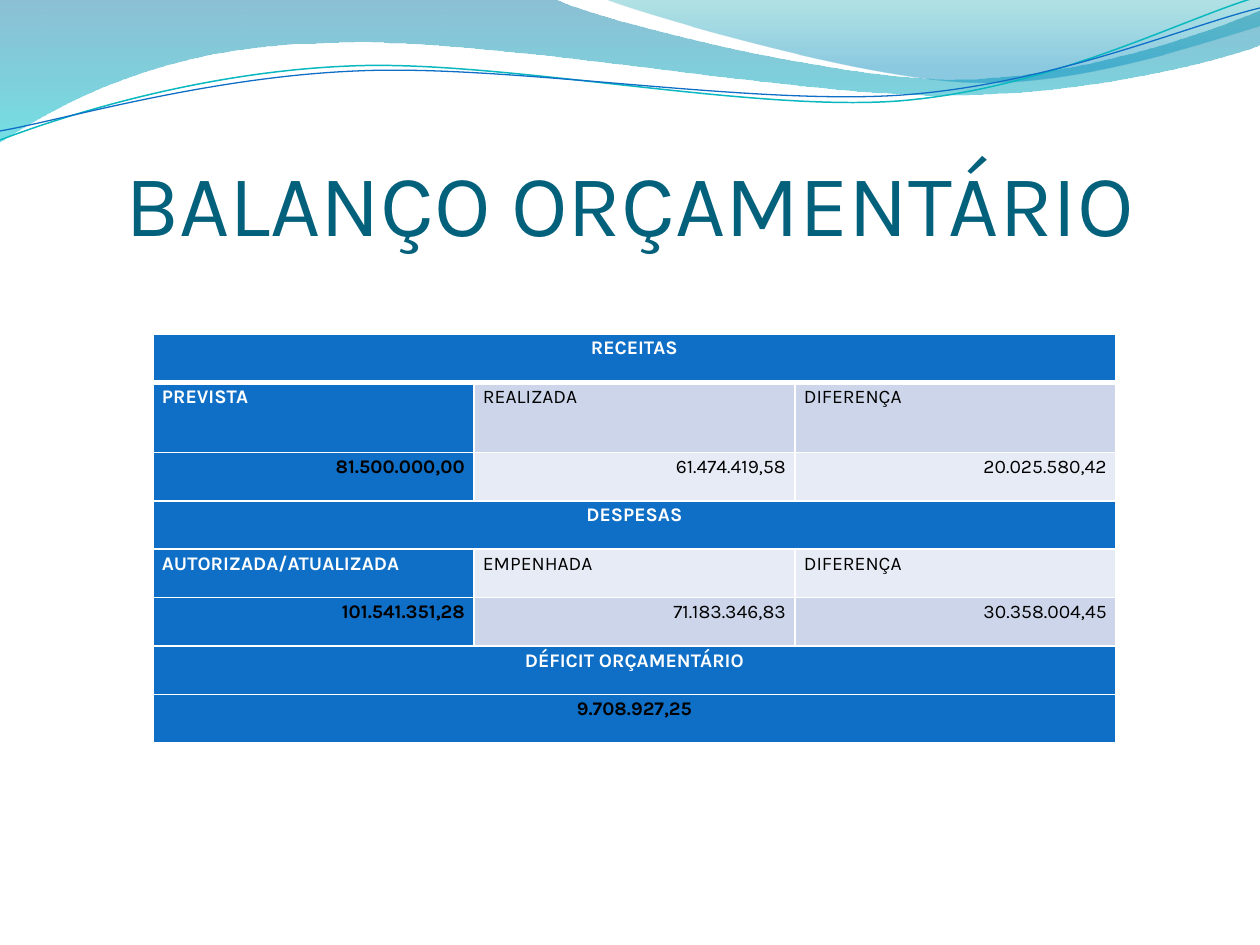
from lxml.etree import SubElement
from pptx import Presentation
from pptx.dml.color import RGBColor
from pptx.enum.text import MSO_ANCHOR, MSO_AUTO_SIZE, PP_ALIGN
from pptx.oxml.ns import qn
from pptx.util import Emu, Pt

FONT = "Karla"
WHITE = RGBColor(0xFF, 0xFF, 0xFF)
BLACK = RGBColor(0, 0, 0)
BLUE = RGBColor(0x0F, 0x6F, 0xC6)
TEAL = RGBColor(0x0A, 0xB8, 0xBF)
NAVY = RGBColor(0x04, 0x61, 0x7B)
DEEP = RGBColor(0x00, 0x74, 0xA1)
CYAN = RGBColor(0x00, 0xC6, 0xCF)
GREEN = RGBColor(0x00, 0xA1, 0xA9)
SKY = RGBColor(0x00, 0x8B, 0xBF)
BAND = RGBColor(0xCC, 0xD5, 0xEA)
PALE = RGBColor(0xE7, 0xEB, 0xF5)

LEFT, MID, RIGHT = PP_ALIGN.LEFT, PP_ALIGN.CENTER, PP_ALIGN.RIGHT

# Each part is a line end (x, y) or a cubic curve (x1, y1, x2, y2, x, y).
WAVE = [(554, -1), (600, 21, 837, 79, 955, 79), (1075, 79, 1207, 33, 1260, 11),
        (1261, 45), (1237, 55, 1096, 96, 940, 95), (784, 95, 481, 35, 324, 43),
        (163, 45, 58, 105, -1, 142)]
CREST = [(641, 14, 859, 78, 969, 82), (1079, 87, 1211, 40, 1260, 26), (1260, 0)]
UPPER = [(60, 117, 199, 72, 349, 66), (498, 59, 747, 112, 898, 101),
         (1050, 89, 1182, 19, 1257, -3)]
LOWER = [(59, 121, 207, 77, 357, 71), (508, 64, 752, 106, 903, 95),
         (1053, 84, 1186, 26, 1260, 8)]

# Alignment, fill of the plain cells, texts; a single text spans the row.
ROWS = [
    (MID, None, ["RECEITAS"]),
    (LEFT, BAND, ["PREVISTA", "REALIZADA", "DIFERENÇA"]),
    (RIGHT, PALE, ["81.500.000,00", "61.474.419,58", "20.025.580,42"]),
    (MID, None, ["DESPESAS"]),
    (LEFT, PALE, ["AUTORIZADA/ATUALIZADA", "EMPENHADA", "DIFERENÇA"]),
    (RIGHT, BAND, ["101.541.351,28", "71.183.346,83", "30.358.004,45"]),
    (MID, None, ["DÉFICIT ORÇAMENTÁRIO"]),
    (MID, None, ["9.708.927,25"]),
]
TALL, HIGH = 70, 409


def px(n):
    return Emu(round(n * 914400 / 126))


def add_path(slide, start, parts, close):
    """Outline the parts' end points, then bend the curved parts."""
    pen = slide.shapes.build_freeform(px(start[0]), px(start[1]))
    pen.add_line_segments([(px(p[-2]), px(p[-1])) for p in parts], close=close)
    shape = pen.convert_to_shape()
    shape.shadow.inherit = False
    lines = list(shape._element.iter(qn("a:lnTo")))
    for line, part in zip(lines, parts):
        if len(part) == 2:
            continue
        home = line.getparent()
        bend = SubElement(home, qn("a:cubicBezTo"))
        for x, y in zip(part[::2], part[1::2]):
            SubElement(bend, qn("a:pt"), x=str(px(x) - shape.left),
                       y=str(px(y) - shape.top))
        home.replace(line, bend)
    return shape


def add_wave(slide, start, parts, stops):
    """Add a filled wave; each stop is a position, a colour and an opacity."""
    shape = add_path(slide, start, parts, True)
    shape.line.fill.background()
    shape.fill.gradient()
    shape.fill.gradient_angle = 270
    for stop, (place, color, alpha) in zip(shape.fill.gradient_stops, stops):
        stop.position = place
        stop.color.rgb = color
        rgb = next(stop._gs.iter(qn("a:srgbClr")))
        SubElement(rgb, qn("a:alpha"), val=str(alpha * 1000))


def add_curve(slide, start, parts, color, width):
    shape = add_path(slide, start, parts, False)
    shape.fill.background()
    shape.line.color.rgb = color
    shape.line.width = Pt(width)


def add_run(para, text, size, color, bold=False):
    run = para.add_run()
    run.text = text
    font = run.font
    font.name, font.size, font.bold = FONT, Pt(size), bold
    font.color.rgb = color


def set_title(slide, text):
    title = slide.shapes.title
    slide.shapes._spTree.append(title._element)
    title.left, title.top = px(63), px(97)
    title.width, title.height = px(1134), px(157)
    frame = title.text_frame
    frame.word_wrap = True
    frame.auto_size = MSO_AUTO_SIZE.NONE
    frame.vertical_anchor = MSO_ANCHOR.BOTTOM
    frame.margin_left = frame.margin_right = frame.margin_bottom = 0
    frame.margin_top = px(6)
    para = frame.paragraphs[0]
    para.alignment = MID
    add_run(para, text, 50, NAVY)


def set_edges(cell, base):
    """Give the cell white borders, with the bottom one `base` points wide."""
    props = cell._tc.get_or_add_tcPr()
    for side, width in (("L", 1), ("R", 1), ("T", 1), ("B", base)):
        edge = SubElement(props, qn("a:ln" + side), w=str(Pt(width)))
        fill = SubElement(edge, qn("a:solidFill"))
        SubElement(fill, qn("a:srgbClr"), val=str(WHITE))


def set_cell(cell, text, align, fill, color, bold):
    cell.fill.solid()
    cell.fill.fore_color.rgb = fill
    cell.margin_left = cell.margin_right = px(9)
    cell.margin_top = cell.margin_bottom = 0
    cell.vertical_anchor = MSO_ANCHOR.TOP
    para = cell.text_frame.paragraphs[0]
    para.alignment = align
    para.line_spacing = 1.15
    add_run(para, text, 11, color, bold)


def add_budget(slide):
    frame = slide.shapes.add_table(len(ROWS), 3, px(153), px(334), px(963), px(HIGH))
    table = frame.table
    for col in table.columns:
        col.width = px(321)
    low = (HIGH - TALL) / (len(ROWS) - 1)
    for r, (align, plain, texts) in enumerate(ROWS):
        table.rows[r].height = px(TALL if r == 1 else low)
        for c in range(3):
            set_edges(table.cell(r, c), 3 if r == 0 else 1)
        if len(texts) == 1:
            table.cell(r, 0).merge(table.cell(r, 2))
        for c, text in enumerate(texts):
            head = c == 0
            label = head and not text[0].isdigit()
            set_cell(table.cell(r, c), text, align, BLUE if head else plain,
                     WHITE if label else BLACK, head)


def main():
    deck = Presentation()
    deck.slide_width, deck.slide_height = px(1260), px(945)
    slide = deck.slides.add_slide(deck.slide_layouts[5])
    add_wave(slide, (0, 0), WAVE, [(0, DEEP, 45), (1, CYAN, 55)])
    add_wave(slide, (604, -1), CREST, [(0, GREEN, 30), (0.8, SKY, 45)])
    add_curve(slide, (0, 140), UPPER, TEAL, 0.85)
    add_curve(slide, (0, 131), LOWER, BLUE, 0.75)
    set_title(slide, "BALANÇO ORÇAMENTÁRIO")
    add_budget(slide)
    deck.save("out.pptx")


if __name__ == "__main__":
    main()
